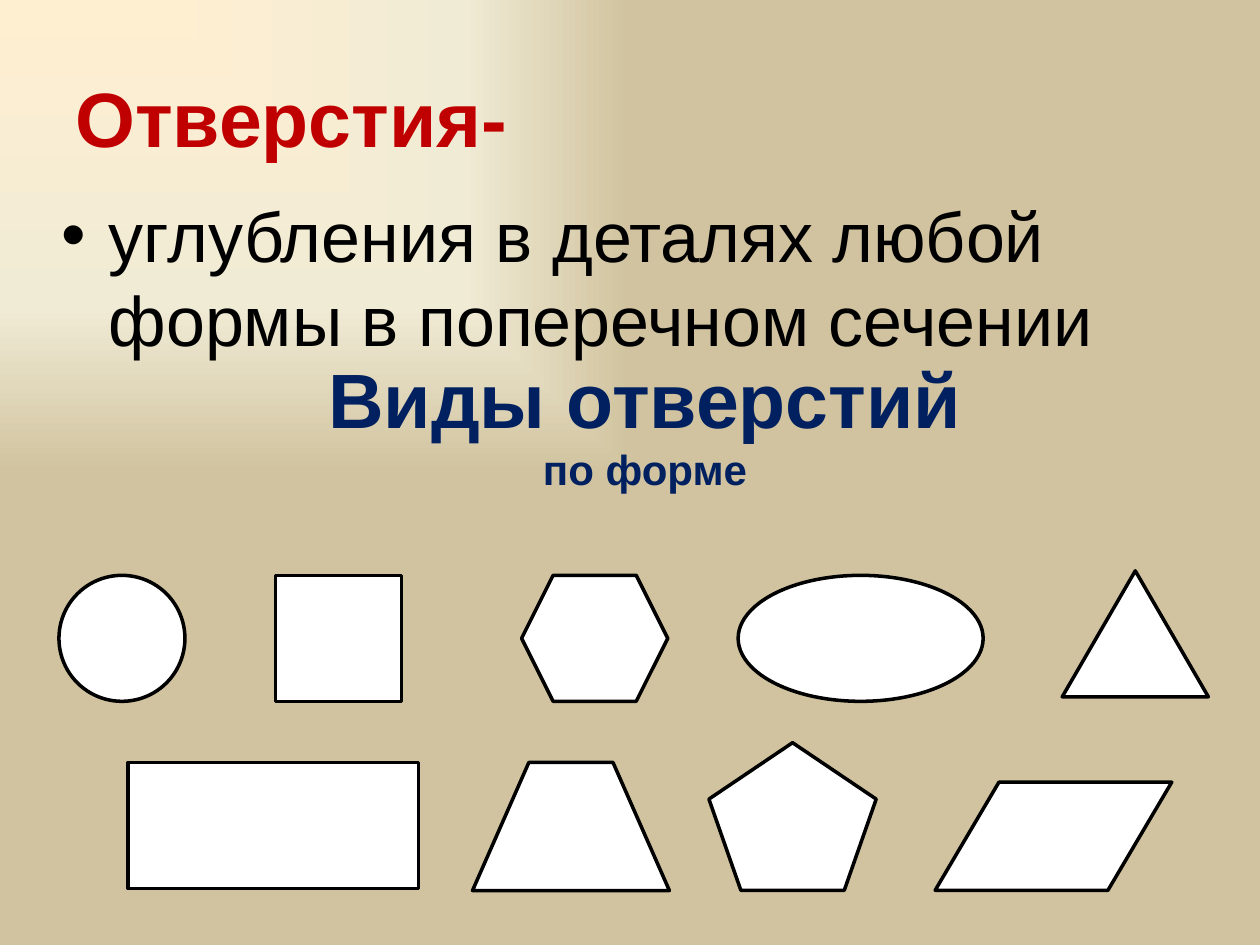
"""Build a slide that defines holes and shows their kinds by shape."""
from lxml.etree import SubElement
from pptx import Presentation
from pptx.dml.color import RGBColor
from pptx.enum.shapes import MSO_SHAPE
from pptx.enum.text import MSO_ANCHOR, PP_ALIGN
from pptx.oxml.ns import qn
from pptx.util import Pt

RED = RGBColor(0xC0, 0x00, 0x00)
NAVY = RGBColor(0x00, 0x20, 0x60)
BLACK = RGBColor(0x00, 0x00, 0x00)
WHITE = RGBColor(0xFF, 0xFF, 0xFF)
CREAM = RGBColor(0xFF, 0xEF, 0xD1)
IVORY = RGBColor(0xF0, 0xEB, 0xD5)
SAND = RGBColor(0xD1, 0xC3, 0x9F)


def add_paragraph(left, top, height, anchor=MSO_ANCHOR.MIDDLE, align=PP_ALIGN.LEFT):
    box = slide.shapes.add_textbox(Pt(left), Pt(top), Pt(648), Pt(height))
    box.text_frame.word_wrap = True
    box.text_frame.vertical_anchor = anchor
    paragraph = box.text_frame.paragraphs[0]
    paragraph.alignment = align
    return paragraph


def add_text(paragraph, text, size=44, color=BLACK, bold=False):
    run = paragraph.add_run()
    run.text = text
    run.font.name = "Arial"
    run.font.size = Pt(size)
    run.font.bold = bold
    run.font.color.rgb = color


presentation = Presentation()
presentation.slide_width = Pt(720)
presentation.slide_height = Pt(540)
slide = presentation.slides.add_slide(presentation.slide_layouts[6])

slide.background.fill.gradient()
gradient = next(slide.element.iter(qn("a:gradFill")))
for child in list(gradient):
    gradient.remove(child)
stops = SubElement(gradient, qn("a:gsLst"))
for position, color in [(0, CREAM), (65, IVORY), (100, SAND)]:
    stop = SubElement(stops, qn("a:gs"), pos=str(position * 1000))
    SubElement(stop, qn("a:srgbClr"), val=str(color))
focus = SubElement(gradient, qn("a:path"), path="rect")
SubElement(focus, qn("a:fillToRect"), r="100000", b="100000")

title = add_paragraph(36, 21.6, 90)
add_text(title, "Отверстия-", color=RED, bold=True)

definition = add_paragraph(28, 106.5, 140.5, anchor=MSO_ANCHOR.TOP)
add_text(definition, "углубления в деталях любой формы в поперечном сечении", size=40)
properties = definition._p.get_or_add_pPr()
properties.set("marL", str(Pt(27)))
properties.set("indent", str(Pt(-27)))
space_before = SubElement(properties, qn("a:spcBef"))
SubElement(space_before, qn("a:spcPct"), val="20000")
SubElement(properties, qn("a:buFont"), typeface="Arial")
SubElement(properties, qn("a:buChar"), char="•")

holes = [
    (MSO_SHAPE.OVAL, 33.7, 328.8, 72, 72, None),
    (MSO_SHAPE.RECTANGLE, 157.5, 328.8, 72, 72, None),
    (MSO_SHAPE.HEXAGON, 298.1, 328.8, 83.5, 72, None),
    (MSO_SHAPE.OVAL, 421.8, 328.8, 140, 72, None),
    (MSO_SHAPE.RECTANGLE, 73.2, 435.7, 166, 72, None),
    (MSO_SHAPE.ISOSCELES_TRIANGLE, 607, 326.2, 83.5, 72, None),
    (MSO_SHAPE.TRAPEZOID, 270, 435.7, 112.5, 73.2, 0.44),
    (MSO_SHAPE.REGULAR_PENTAGON, 405.1, 424.4, 95.6, 84.4, None),
    (MSO_SHAPE.PARALLELOGRAM, 534.4, 447, 135.2, 61.8, 0.59),
]
for kind, left, top, width, height, adjustment in holes:
    hole = slide.shapes.add_shape(kind, Pt(left), Pt(top), Pt(width), Pt(height))
    hole.shadow.inherit = False
    hole.fill.solid()
    hole.fill.fore_color.rgb = WHITE
    hole.line.color.rgb = BLACK
    hole.line.width = Pt(2)
    if adjustment is not None:
        hole.adjustments[0] = adjustment

heading = add_paragraph(44.6, 196.6, 90, align=PP_ALIGN.CENTER)
add_text(heading, "Виды отверстий", color=NAVY, bold=True)
heading.add_line_break()
add_text(heading, "по форме", size=24, color=NAVY, bold=True)

presentation.save("out.pptx")
